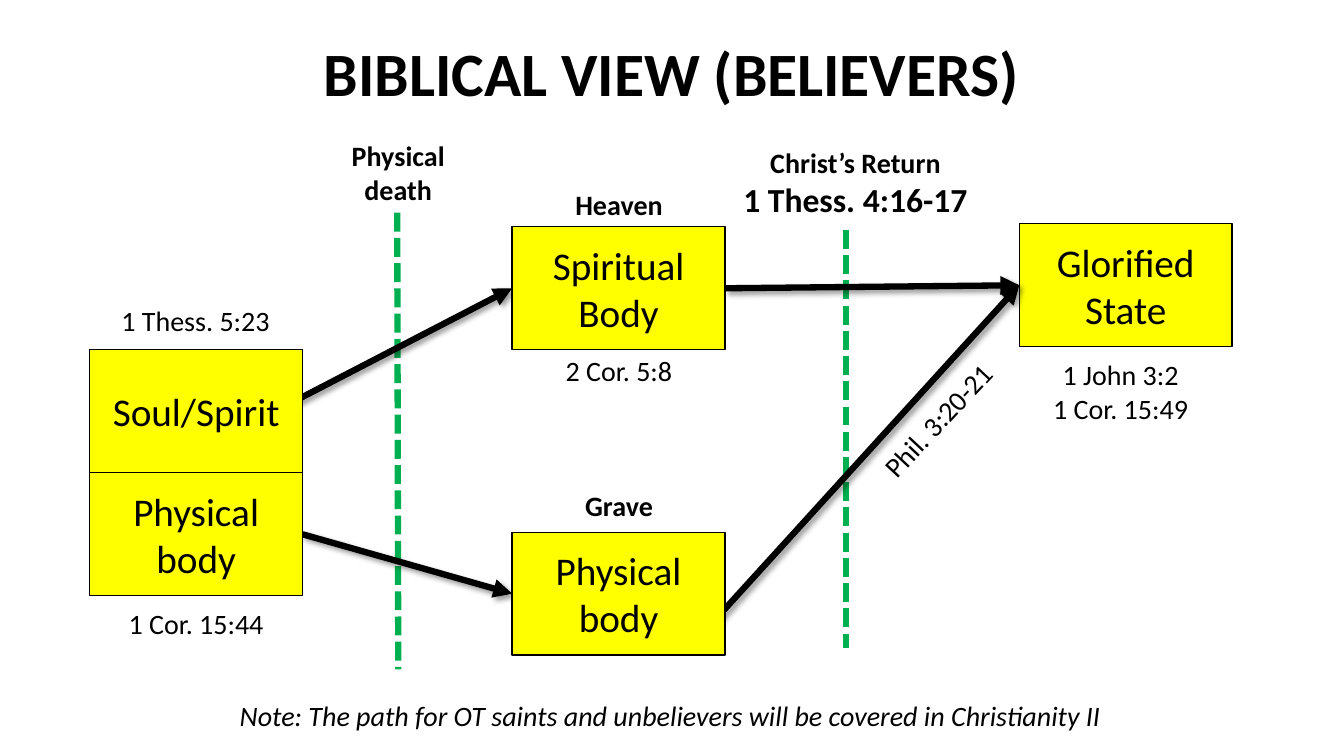
from lxml.etree import SubElement
from pptx import Presentation
from pptx.dml.color import RGBColor
from pptx.enum.dml import MSO_LINE
from pptx.enum.shapes import MSO_CONNECTOR, MSO_SHAPE
from pptx.enum.text import MSO_ANCHOR, PP_ALIGN
from pptx.oxml.ns import qn
from pptx.util import Pt

PX = 9144
COLORS = {"ink": "000000", "paper": "FFFFFF", "state": "FFFF00", "event": "00B050"}
FONT = "Calibri"
WIDE, HIGH = 211, 122


def color(name):
    """Return the named colour."""
    return RGBColor.from_string(COLORS[name])


def write(shape, lines, size, bold=False, italic=False, anchor=MSO_ANCHOR.TOP):
    """Fill a shape with centred lines, each a text or a (text, size) pair."""
    frame = shape.text_frame
    frame.word_wrap = True
    frame.vertical_anchor = anchor
    for i, line in enumerate(lines):
        text, points = line if isinstance(line, tuple) else (line, size)
        para = frame.paragraphs[0] if i == 0 else frame.add_paragraph()
        para.text = text
        para.alignment = PP_ALIGN.CENTER
        font = para.font
        font.name, font.size = FONT, Pt(points)
        font.bold, font.italic = bold, italic
        font.color.rgb = color("ink")


def label(slide, box, *lines, size=20, turn=0, **style):
    """Place a free text in the box."""
    shape = slide.shapes.add_textbox(*(v * PX for v in box))
    shape.rotation = turn
    write(shape, lines, size, **style)
    return shape


def stroke(slide, start, end, name):
    """Draw a thick line and return it with its effect list."""
    line = slide.shapes.add_connector(
        MSO_CONNECTOR.STRAIGHT, *(v * PX for v in start + end))
    line.line.width = Pt(4.5)
    line.line.color.rgb = color(name)
    return line, SubElement(line._element.spPr, qn("a:effectLst"))


def arrow(slide, start, end):
    """Draw a black arrow with a soft shadow."""
    line, effects = stroke(slide, start, end, "ink")
    SubElement(line.line._get_or_add_ln(), qn("a:tailEnd"), type="triangle")
    shade = SubElement(effects, qn("a:outerShdw"), blurRad=str(Pt(4)),
                       dist=str(Pt(3)), dir="2700000", rotWithShape="0")
    tint = SubElement(shade, qn("a:srgbClr"), val=COLORS["ink"])
    SubElement(tint, qn("a:alpha"), val="40000")


def event(slide, box, start, end, *lines):
    """Draw a dashed time line with its bold heading in the box."""
    line, _ = stroke(slide, start, end, "event")
    line.line.dash_style = MSO_LINE.SQUARE_DOT
    head = label(slide, box, *lines, bold=True)
    head.fill.solid()
    head.fill.fore_color.rgb = color("paper")


def state(slide, left, top, text):
    """Draw a yellow state box."""
    shape = slide.shapes.add_shape(
        MSO_SHAPE.RECTANGLE, *(v * PX for v in (left, top, WIDE, HIGH)))
    shape.shadow.inherit = False
    shape.fill.solid()
    shape.fill.fore_color.rgb = color("state")
    shape.line.color.rgb = color("ink")
    shape.line.width = Pt(1)
    write(shape, [text], 28, anchor=MSO_ANCHOR.MIDDLE)


def life(slide, left, top):
    """Draw the living person: soul above body."""
    state(slide, left, top + HIGH, "Physical body")
    state(slide, left, top, "Soul/Spirit")
    label(slide, (left - 20, top - 51, 250, 44), "1 Thess. 5:23")
    label(slide, (left - 4, top + 2 * HIGH + 6, 219, 44), "1 Cor. 15:44")


def between(slide, left, top, grave):
    """Draw the states between death and return."""
    label(slide, (left + 15, top - 44, 182, 44), "Heaven", bold=True)
    state(slide, left, top, "Spiritual Body")
    label(slide, (left + 3, top + HIGH - 1, 206, 44), "2 Cor. 5:8")
    label(slide, (left + 28, grave - 48, 156, 44), "Grave", bold=True)
    state(slide, left, grave, "Physical body")


def glory(slide, left, top):
    """Draw the final state."""
    state(slide, left, top, "Glorified State")
    label(slide, (left - 19, top + HIGH + 6, 239, 77), "1 John 3:2", "1 Cor. 15:49")


def paths(slide):
    """Draw the arrows that join the states."""
    goal = (1011, 283)
    arrow(slide, (294, 397), (508, 286))
    arrow(slide, (300, 530), (508, 589))
    arrow(slide, (700, 625), goal)
    arrow(slide, (719, 286), goal)
    label(slide, (827, 395, 206, 44), "Phil. 3:20-21", turn=313)


def main():
    """Build and save the slide."""
    deck = Presentation()
    deck.slide_width, deck.slide_height = 1333 * PX, 750 * PX
    slide = deck.slides.add_slide(deck.slide_layouts[6])
    label(slide, (0, 0, 1333, 142), "BIBLICAL VIEW (BELIEVERS)", size=44,
          bold=True, anchor=MSO_ANCHOR.MIDDLE)
    event(slide, (317, 133, 156, 77), (394, 211), (395, 664), "Physical death")
    event(slide, (707, 139, 283, 84), (839, 203), (839, 643),
          "Christ’s Return", ("1 Thess. 4:16-17", 24))
    glory(slide, 1011, 222)
    paths(slide)
    life(slide, 89, 347)
    between(slide, 508, 225, 528)
    label(slide, (90, 688, 1150, 44), "Note: The path for OT saints and unbelievers "
          "will be covered in Christianity II", italic=True)
    deck.save("out.pptx")


if __name__ == "__main__":
    main()
